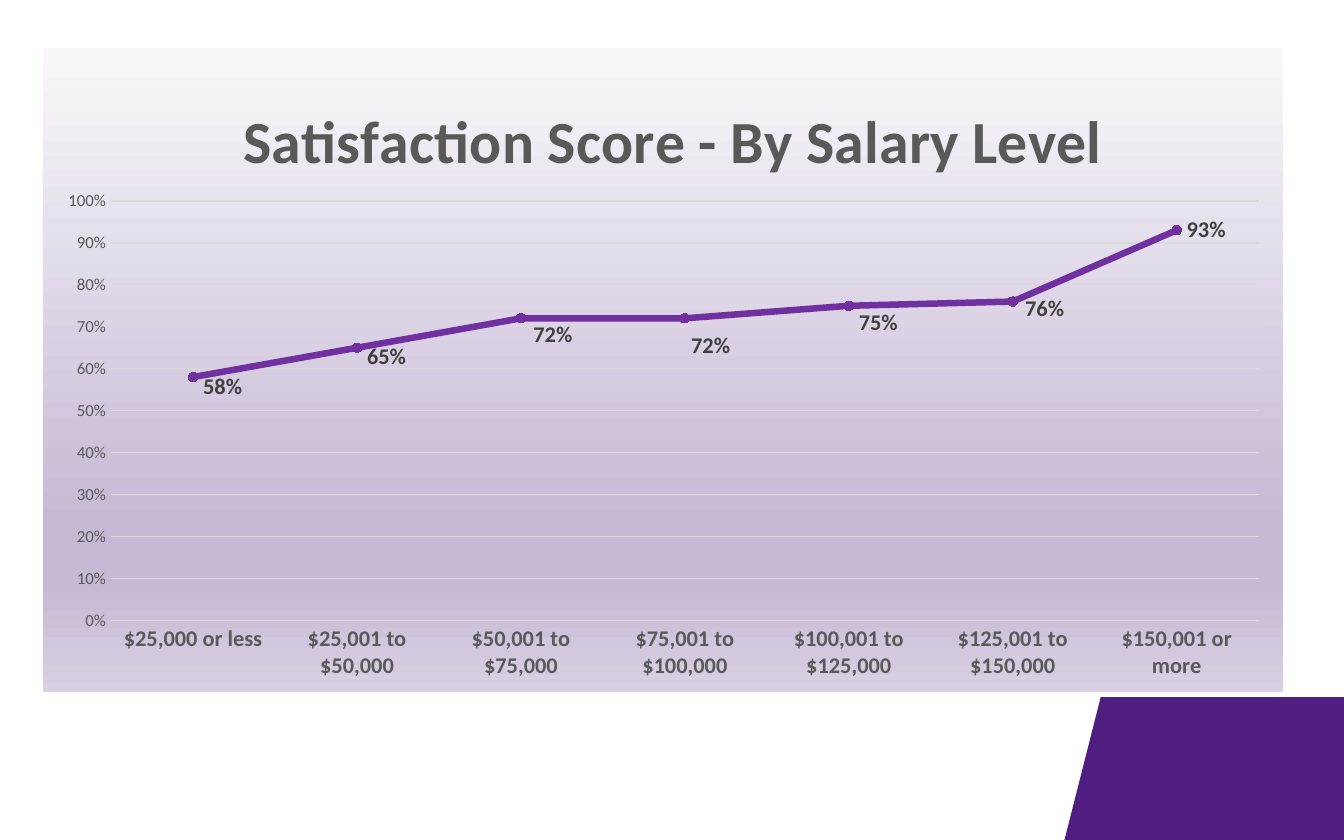
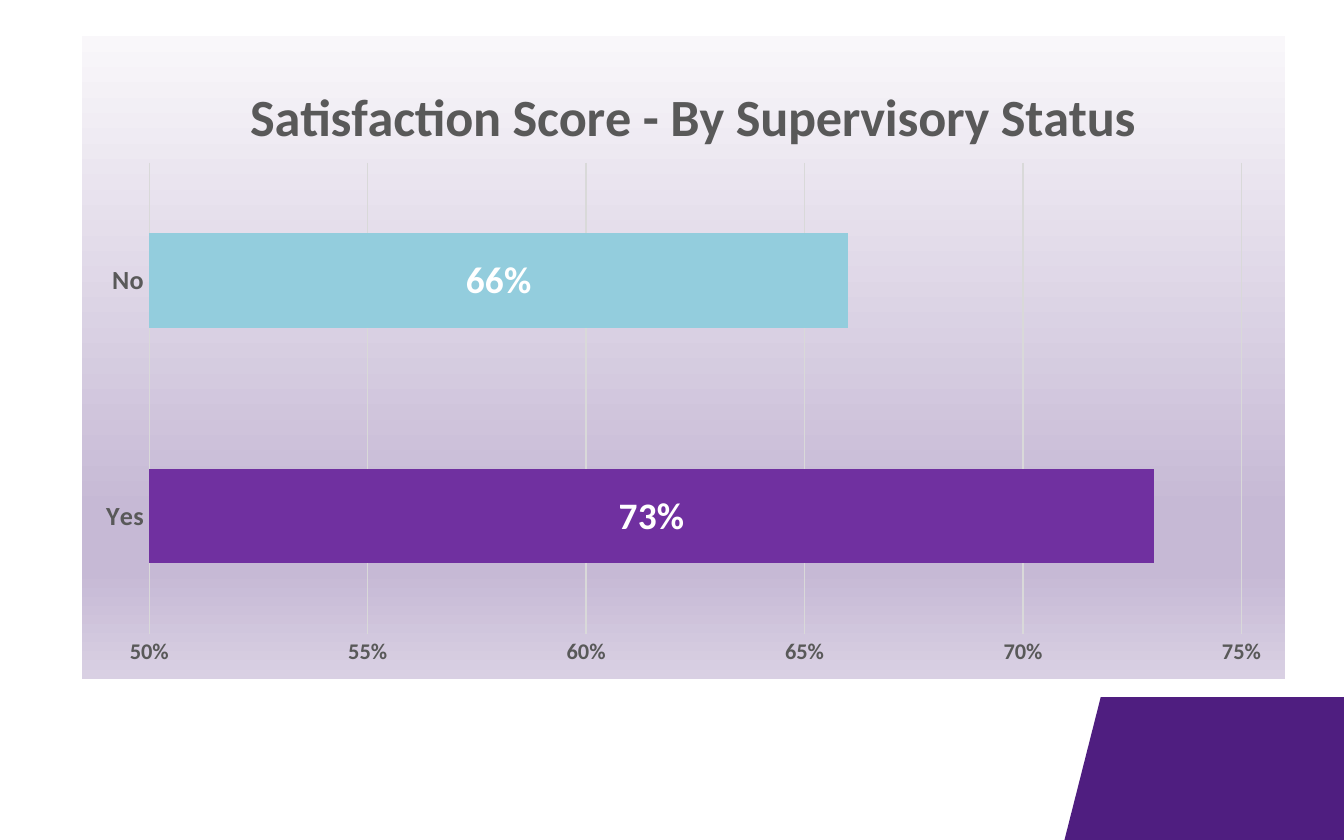
from lxml import etree
from pptx import Presentation
from pptx.chart.data import CategoryChartData
from pptx.dml.color import RGBColor
from pptx.enum.chart import (XL_CHART_TYPE, XL_LABEL_POSITION,
                             XL_MARKER_STYLE, XL_TICK_MARK)
from pptx.oxml import parse_xml
from pptx.oxml.ns import nsdecls, qn
from pptx.util import Inches, Pt

LINE, BAR = XL_CHART_TYPE.LINE_MARKERS, XL_CHART_TYPE.BAR_STACKED
RIGHT, CENTER = XL_LABEL_POSITION.RIGHT, XL_LABEL_POSITION.CENTER
CIRCLE, NO_TICK = XL_MARKER_STYLE.CIRCLE, XL_TICK_MARK.NONE

SLIDE_W, SLIDE_H = Inches(10), Inches(6.25)
FONT, PERCENT = "Calibri", "0%"
CORNER, PURPLE, AQUA = "4F1E80", "7030A0", "93CDDD"
GREY, DARK, RULE, BLACK, WHITE = "595959", "404040", "D9D9D9", "000000", "FFFFFF"
PANEL_STOPS = [(0, "F9F7FA"), (74, "C6B9D5"), (83, "C6B9D5"), (100, "D9D0E3")]


def color(value):
    return RGBColor.from_string(value)


def fill_solid(fmt, value):
    fmt.fill.solid()
    fmt.fill.fore_color.rgb = color(value)


def style_line(line, value, width):
    line.color.rgb = color(value)
    line.width = Pt(width)


def style_font(font, size, value, bold=False):
    for key, val in {"name": FONT, "size": Pt(size), "bold": bold}.items():
        setattr(font, key, val)
    font.color.rgb = color(value)


def set_layout(parent, after, **values):
    """Give a chart part a manual layout, in shares of the chart's size."""
    for old in parent.findall(qn("c:layout")):
        parent.remove(old)
    layout = etree.Element(qn("c:layout"))
    manual = etree.SubElement(layout, qn("c:manualLayout"))
    for key, val in values.items():
        etree.SubElement(manual, qn(f"c:{key}")).set("val", str(val))
    before = parent.find(qn(after)) if after else None
    parent.insert(0 if before is None else parent.index(before) + 1, layout)


# Corner shared by all slides
def add_corner(slide, layout):
    points = [(0.819, 0.83), (1, 0.83), (1, 1), (0.792, 1)]
    start, *rest = [(round(x * SLIDE_W), round(y * SLIDE_H)) for x, y in points]
    builder = slide.shapes.build_freeform(*start)
    builder.add_line_segments(rest, close=True)
    s = builder.convert_to_shape()
    s.shadow.inherit = False
    fill_solid(s, CORNER)
    s.line.fill.background()
    layout.shapes._spTree.append(s._element)


# Gradient panel behind a chart
def fill_panel(chart):
    stops = "".join(f'<a:gs pos="{pos * 1000}"><a:srgbClr val="{rgb}"/></a:gs>'
                    for pos, rgb in PANEL_STOPS)
    panel = parse_xml(f'<c:spPr {nsdecls("c", "a")}><a:gradFill><a:gsLst>{stops}'
                      '</a:gsLst><a:lin ang="5400000" scaled="0"/></a:gradFill>'
                      '<a:ln><a:noFill/></a:ln></c:spPr>')
    chart._chartSpace.find(qn("c:chart")).addnext(panel)


def style_title(chart, text, size, x, y):
    tf = chart.chart_title.text_frame
    r = tf.paragraphs[0].add_run()
    r.text = text
    style_font(r.font, size, GREY, True)
    set_layout(chart.chart_title._element, "c:tx",
               xMode="edge", yMode="edge", x=x, y=y)


def style_value_axis(axis, low, high, step, size, bold):
    for key, val in {"minimum_scale": low, "maximum_scale": high,
                     "major_unit": step, "major_tick_mark": NO_TICK,
                     "has_major_gridlines": True}.items():
        setattr(axis, key, val)
    axis.tick_labels.number_format = PERCENT
    axis.tick_labels.number_format_is_linked = False
    style_font(axis.tick_labels.font, size, GREY, bold)
    style_line(axis.major_gridlines.format.line, RULE, 0.75)
    axis.format.line.fill.background()


def style_labels(plot, size, value, position):
    labels = plot.series[0].data_labels
    for key, val in {"show_value": True, "number_format": PERCENT,
                     "number_format_is_linked": False,
                     "position": position}.items():
        setattr(labels, key, val)
    style_font(labels.font, size, value, True)


# Chart panel with its title and axes
def add_score_chart(slide, box, kind, scores, title, plot_box, scale, cat_size):
    data = CategoryChartData(number_format=PERCENT)
    data.categories = list(scores)
    data.add_series("Series 1", scores.values())
    chart = slide.shapes.add_chart(kind, *map(Inches, box), data).chart
    chart.has_legend = False
    style_font(chart.font, 10, BLACK)
    fill_panel(chart)
    style_title(chart, *title)
    x, y, w, h = plot_box
    set_layout(chart._chartSpace.chart.plotArea, None, layoutTarget="inner",
               xMode="edge", yMode="edge", x=x, y=y, w=w, h=h)
    style_value_axis(chart.value_axis, *scale)
    axis = chart.category_axis
    axis.major_tick_mark = NO_TICK
    style_font(axis.tick_labels.font, cat_size, GREY, True)
    chart.plots[0].vary_by_categories = False
    return chart


def salary_slide(slide):
    scores = {"$25,000 or less": 0.58, "$25,001 to $50,000": 0.65,
              "$50,001 to $75,000": 0.72, "$75,001 to $100,000": 0.72,
              "$100,001 to $125,000": 0.75, "$125,001 to $150,000": 0.76,
              "$150,001 or more": 0.93}
    chart = add_score_chart(
        slide, (0.32, 0.36, 9.23, 4.79), LINE, scores,
        ("Satisfaction Score - By Salary Level", 32, 0.153, 0.062),
        (0.055, 0.237, 0.925, 0.652), (0, 1, 0.1, 9, False), 12)
    style_line(chart.category_axis.format.line, RULE, 0.75)
    plot = chart.plots[0]
    series = plot.series[0]
    series.smooth = False
    style_line(series.format.line, PURPLE, 3.5)
    series.marker.style, series.marker.size = CIRCLE, 5
    fill_solid(series.marker.format, PURPLE)
    style_line(series.marker.format.line, PURPLE, 0.75)
    style_labels(plot, 12, DARK, RIGHT)
    # Labels moved off the line, in shares of the chart's size
    offsets = [(0, 0.015), (0, 0.014), (0.002, 0.026), (-0.003, 0.042),
               (0, 0.026), (0.002, 0.011)]
    for i, (dx, dy) in enumerate(offsets):
        label = series.points[i].data_label
        style_font(label.font, 12, DARK, True)
        label.position = RIGHT
        set_layout(label._dLbl, "c:idx", x=dx, y=dy)


def supervisor_slide(slide):
    chart = add_score_chart(
        slide, (0.61, 0.27, 8.95, 4.78), BAR, {"Yes": 0.73, "No": 0.66},
        ("Satisfaction Score - By Supervisory Status", 28, 0.132, 0.056),
        (0.056, 0.197, 0.908, 0.733), (0.5, 0.75, 0.05, 12, True), 14)
    chart.category_axis.format.line.fill.background()
    plot = chart.plots[0]
    plot.gap_width, plot.overlap = 150, 100
    series = plot.series[0]
    fill_solid(series.format, AQUA)
    fill_solid(series.points[0].format, PURPLE)
    style_labels(plot, 20, WHITE, CENTER)


def main():
    prs = Presentation()
    prs.slide_width, prs.slide_height = SLIDE_W, SLIDE_H
    layout = prs.slide_layouts[6]
    slides = [prs.slides.add_slide(layout) for _ in range(2)]
    add_corner(slides[0], layout)
    salary_slide(slides[0])
    supervisor_slide(slides[1])
    prs.save("out.pptx")


if __name__ == "__main__":
    main()
